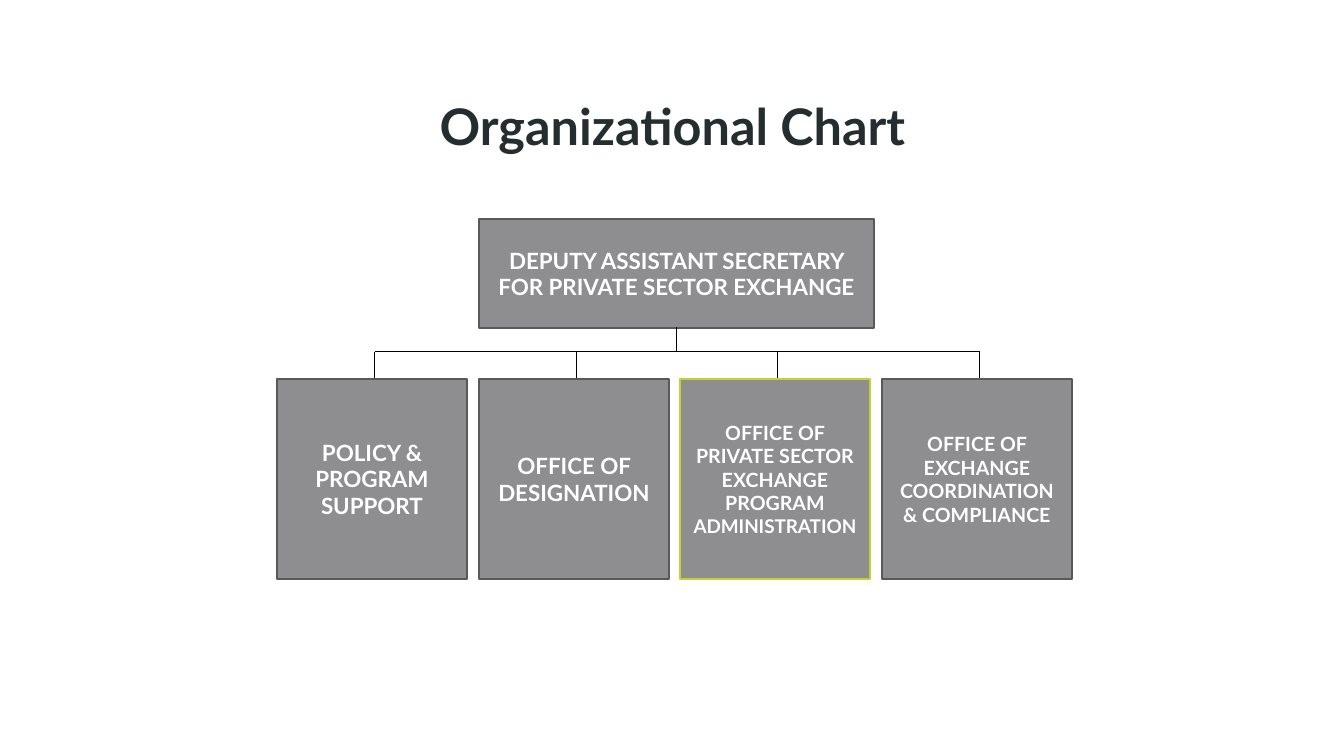
"""Build the organizational chart slide."""
from lxml.etree import SubElement
from pptx import Presentation
from pptx.dml.color import RGBColor
from pptx.enum.shapes import MSO_CONNECTOR, MSO_SHAPE
from pptx.enum.text import MSO_ANCHOR, PP_ALIGN
from pptx.oxml.ns import qn
from pptx.util import Emu, Pt

INK = RGBColor(0x24, 0x2E, 0x31)
WHITE = RGBColor(0xFF, 0xFF, 0xFF)
GRAY = RGBColor(0x8E, 0x8E, 0x90)
BORDER = RGBColor(0x59, 0x59, 0x59)
HIGHLIGHT = RGBColor(0xC4, 0xD2, 0x31)
BLACK = RGBColor(0x00, 0x00, 0x00)


def px(*lengths):
    return [Emu(round(length * 914400 / 100.8)) for length in lengths]


class Chart:
    font = "Lato"

    def __init__(self, slide):
        self.shapes = slide.shapes

    def set_text(self, frame, runs, color):
        frame.word_wrap = True
        paragraph = frame.paragraphs[0]
        paragraph.alignment = PP_ALIGN.CENTER
        paragraph.font.name = self.font
        paragraph.font.bold = True
        paragraph.font.color.rgb = color
        paragraph.font.size = Pt(runs[0][1])
        for text, size in runs:
            run = paragraph.add_run()
            run.text = text
            if size != runs[0][1]:
                run.font.size = Pt(size)

    def title(self, text, left, top, width, height):
        frame = self.shapes.add_textbox(*px(left, top, width, height)).text_frame
        frame.margin_left, frame.margin_top, frame.margin_right, frame.margin_bottom = px(5, 5, 5, 5)
        self.set_text(frame, [(text, 36)], INK)

    def box(self, runs, left, top, width, height, border=BORDER):
        box = self.shapes.add_shape(MSO_SHAPE.RECTANGLE, *px(left, top, width, height))
        box.shadow.inherit = False
        box.fill.solid()
        box.fill.fore_color.rgb = GRAY
        box.line.color.rgb = border
        box.line.width = Pt(2)
        box.text_frame.vertical_anchor = MSO_ANCHOR.MIDDLE
        self.set_text(box.text_frame, runs, WHITE)

    def line(self, x1, y1, x2, y2):
        line = self.shapes.add_connector(MSO_CONNECTOR.STRAIGHT, *px(x1, y1, x2, y2))
        line.line.color.rgb = BLACK
        line.line.width = Pt(0.75)
        SubElement(line._element.spPr, qn("a:effectLst"))


OFFICES = [
    ([("POLICY & PROGRAM SUPPORT", 16)], BORDER),
    ([("OFFICE OF DESIGNATION", 16)], BORDER),
    ([("OFFICE OF PRIVATE SECTOR EXCHANGE PROGRAM ", 14), ("ADMINISTRATION", 13.5)], HIGHLIGHT),
    ([("OFFICE OF EXCHANGE COORDINATION & COMPLIANCE", 14)], BORDER),
]
BUS_Y, OFFICE_TOP = 352, 379
OFFICE_LEFTS = [round(277.2 + 201.6 * i) for i in range(len(OFFICES))]
DROPS = [left + 98 for left in OFFICE_LEFTS]

presentation = Presentation()
presentation.slide_width, presentation.slide_height = px(1344, 756)
chart = Chart(presentation.slides.add_slide(presentation.slide_layouts[6]))

chart.title("Organizational Chart", 320, 90, 705, 71)
chart.box([("DEPUTY ASSISTANT SECRETARY FOR PRIVATE SECTOR EXCHANGE", 16)], 479, 219, 395, 109)
chart.line(677, 327, 677, BUS_Y)
chart.line(DROPS[0], BUS_Y, DROPS[-1], BUS_Y)
for (office, border), left, drop in zip(OFFICES, OFFICE_LEFTS, DROPS):
    chart.line(drop, BUS_Y, drop, OFFICE_TOP)
    chart.box(office, left, OFFICE_TOP, 190, 200, border)

presentation.save("out.pptx")
